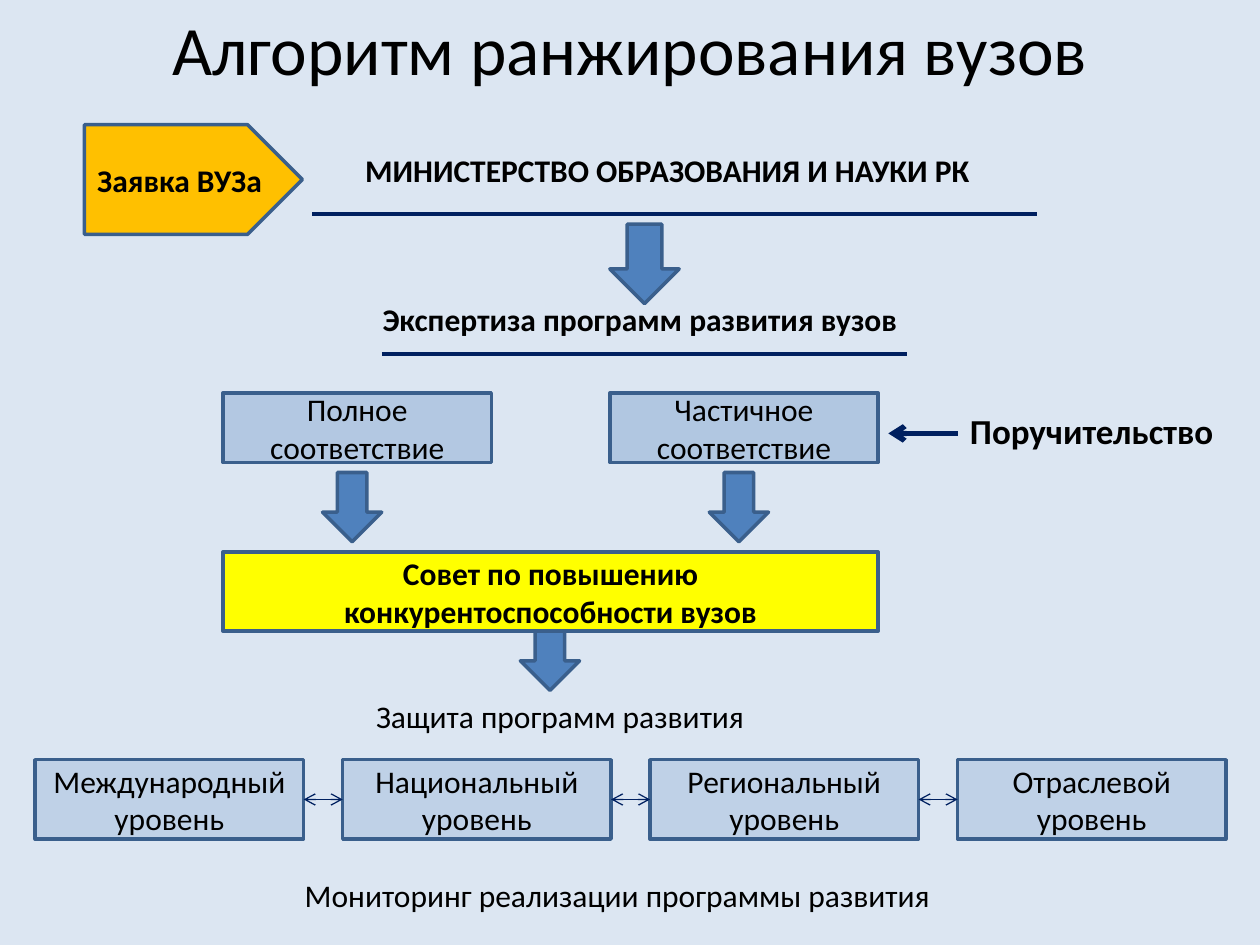
from itertools import pairwise

from lxml.etree import SubElement
from pptx import Presentation
from pptx.dml.color import RGBColor
from pptx.enum.shapes import MSO_CONNECTOR, MSO_SHAPE
from pptx.enum.text import MSO_ANCHOR, MSO_AUTO_SIZE, PP_ALIGN
from pptx.oxml.ns import qn
from pptx.util import Inches, Pt

COLORS = {
    "background": "DCE6F2",
    "text": "000000",
    "blue": "4F81BD",
    "outline": "3A5F8C",
    "navy": "002060",
    "orange": "FFC000",
    "yellow": "FFFF00",
}


class SlideBuilder:
    font = "Calibri"
    size = 18

    def __init__(self, prs):
        self.slide = prs.slides.add_slide(prs.slide_layouts[5])
        fill = self.slide.background.fill
        fill.solid()
        fill.fore_color.rgb = self.color("background")

    def color(self, name):
        return RGBColor.from_string(COLORS[name])

    def add_text(self, tf, text, size=None, bold=False, align=PP_ALIGN.CENTER):
        tf.word_wrap = True
        p = tf.paragraphs[0]
        p.alignment = align
        r = p.add_run()
        r.text = text
        r.font.name = self.font
        r.font.size = Pt(size or self.size)
        r.font.bold = bold
        r.font.color.rgb = self.color("text")

    def title(self, text, x, y, w, h):
        sp = self.slide.shapes.title
        sp.left, sp.top, sp.width, sp.height = map(Inches, (x, y, w, h))
        tf = sp.text_frame
        tf.vertical_anchor = MSO_ANCHOR.MIDDLE
        self.add_text(tf, text, size=39.6)

    def label(self, text, x, y, w, h=0.4, **style):
        sp = self.slide.shapes.add_textbox(*map(Inches, (x, y, w, h)))
        self.add_text(sp.text_frame, text, **style)
        sp.text_frame.auto_size = MSO_AUTO_SIZE.SHAPE_TO_FIT_TEXT

    def shape(self, kind, x, y, w, h, fill="blue", alpha=None, text=None, bold=False):
        sp = self.slide.shapes.add_shape(kind, *map(Inches, (x, y, w, h)))
        sp.shadow.inherit = False
        sp.fill.solid()
        sp.fill.fore_color.rgb = self.color(fill)
        if alpha:
            rgb = sp._element.spPr.find(qn("a:solidFill")).find(qn("a:srgbClr"))
            SubElement(rgb, qn("a:alpha")).set("val", str(alpha * 1000))
        sp.line.color.rgb = self.color("outline")
        sp.line.width = Pt(2)
        if text:
            sp.text_frame.vertical_anchor = MSO_ANCHOR.MIDDLE
            self.add_text(sp.text_frame, text, bold=bold)
        return sp

    def box(self, text, x, y, w, h, **style):
        return self.shape(MSO_SHAPE.RECTANGLE, x, y, w, h, text=text, **style)

    def down_arrow(self, x, y, w, h):
        return self.shape(MSO_SHAPE.DOWN_ARROW, x, y, w, h)

    def line(self, x1, y1, x2, y2, width=2.25, ends=()):
        cxn = self.slide.shapes.add_connector(
            MSO_CONNECTOR.STRAIGHT, *map(Inches, (x1, y1, x2, y2)))
        cxn.line.color.rgb = self.color("navy")
        cxn.line.width = Pt(width)
        ln = cxn._element.spPr.find(qn("a:ln"))
        for end in ends:
            SubElement(ln, qn(f"a:{end}")).set("type", "arrow")
        SubElement(cxn._element.spPr, qn("a:effectLst"))
        return cxn

    def link(self, left, right):
        cxn = self.line(0, 0, 1, 0, width=0.75, ends=("headEnd", "tailEnd"))
        cxn.begin_connect(left, 3)
        cxn.end_connect(right, 1)


def main():
    prs = Presentation()
    prs.slide_width, prs.slide_height = Inches(10), Inches(7.5)
    s = SlideBuilder(prs)
    box_w = 2.13

    s.title("Алгоритм ранжирования вузов", 0, 0, 10, 0.76)
    s.shape(MSO_SHAPE.PENTAGON, 0.67, 0.99, 1.73, 0.87, fill="orange",
            text="Заявка ВУЗа", bold=True)
    s.label("МИНИСТЕРСТВО ОБРАЗОВАНИЯ И НАУКИ РК", 2.8, 1.15, 6.22,
            bold=True, align=PP_ALIGN.LEFT)
    s.line(2.48, 1.7, 8.23, 1.7)
    s.down_arrow(4.84, 1.78, 0.55, 0.63)
    s.label("Экспертиза программ развития вузов", 2.56, 2.33, 5.04, bold=True)
    s.line(3.03, 2.81, 7.2, 2.81)

    for x, text, alpha in ((1.77, "Полное соответствие", 29),
                           (4.84, "Частичное соответствие", 30)):
        s.box(text, x, 3.12, box_w, 0.55, alpha=alpha)
        s.down_arrow(x + 0.79, 3.75, 0.47, 0.55)
    s.line(7.6, 3.44, 7.05, 3.44, width=3, ends=("tailEnd",))
    s.label("Поручительство", 7.6, 3.2, 2.4, 0.44, size=20, bold=True,
            align=PP_ALIGN.LEFT)

    s.box("Совет по повышению конкурентоспособности вузов", 1.77, 4.38, 5.2, 0.63,
          fill="yellow", bold=True)
    s.down_arrow(4.13, 5.01, 0.47, 0.47)
    s.label("Защита программ развития", 2.32, 5.48, 4.25)

    levels = ("Международный", "Национальный", "Региональный", "Отраслевой")
    boxes = [s.box(f"{level} уровень", 0.28 + 2.44 * i, 6.03, box_w, 0.63, alpha=20)
             for i, level in enumerate(levels)]
    for left, right in pairwise(boxes):
        s.link(left, right)
    s.label("Мониторинг реализации программы развития", 2.32, 6.9, 5.35,
            align=PP_ALIGN.LEFT)

    prs.save("out.pptx")


if __name__ == "__main__":
    main()
